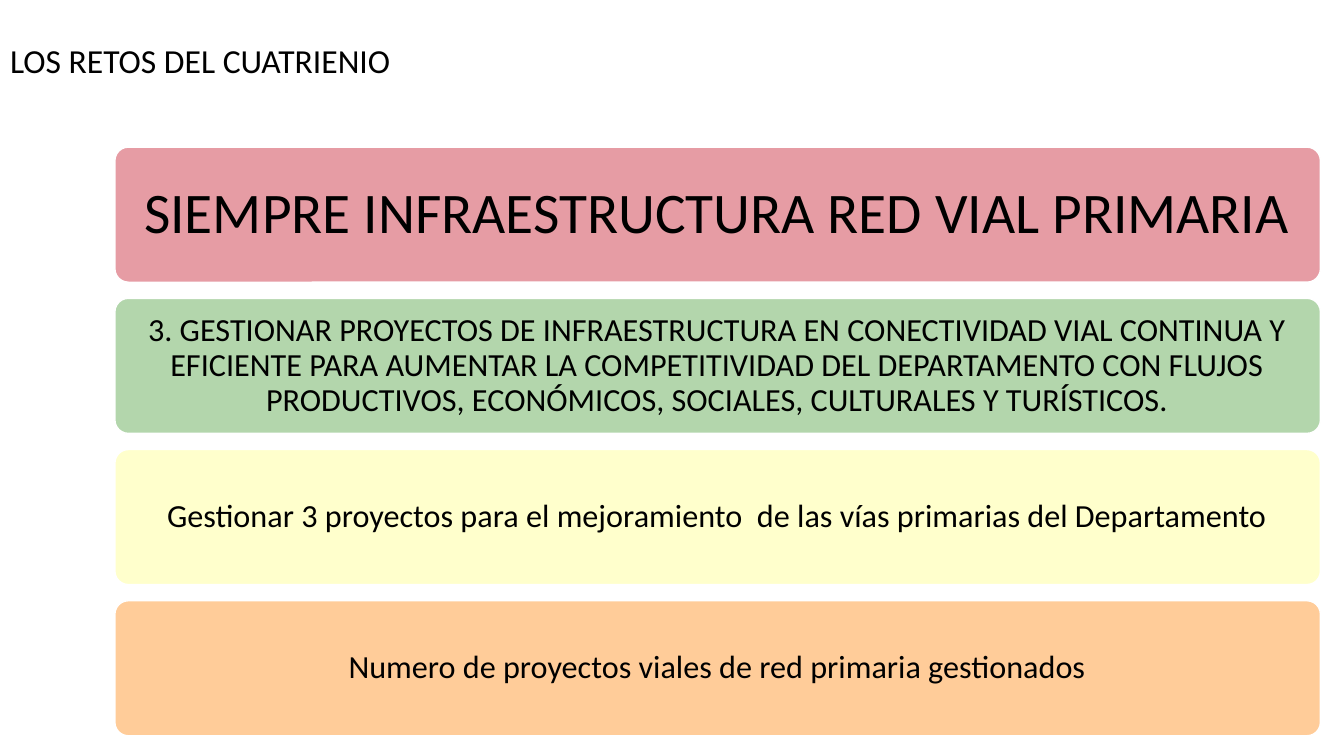
import pptx
import pptx.util
import pptx.dml.color
import pptx.enum.shapes
import pptx.enum.text

Pt = pptx.util.Pt
ALIGN = pptx.enum.text.PP_ALIGN
MIDDLE = pptx.enum.text.MSO_ANCHOR.MIDDLE
ROUNDED = pptx.enum.shapes.MSO_SHAPE.ROUNDED_RECTANGLE

BAND_LEFT, BAND_TOP = 82.1, 105.1
BAND_WIDTH, BAND_HEIGHT = 861.1, 96.5
BAND_PITCH = 108

# text, fill, font size, inset
BANDS = [
    ("SIEMPRE INFRAESTRUCTURA RED VIAL PRIMARIA", "E69CA4", 41, 12.3),
    ("3. GESTIONAR PROYECTOS DE INFRAESTRUCTURA EN CONECTIVIDAD VIAL CONTINUA Y "
     "EFICIENTE PARA AUMENTAR LA COMPETITIVIDAD DEL DEPARTAMENTO CON FLUJOS "
     "PRODUCTIVOS, ECONÓMICOS, SOCIALES, CULTURALES Y TURÍSTICOS.", "B3D6AC", 23, 6.9),
    ("Gestionar 3 proyectos para el mejoramiento  de las vías primarias del Departamento",
     "FFFFCC", 23, 6.9),
    ("Numero de proyectos viales de red primaria gestionados", "FFCC99", 23, 6.9),
]


def color(hex_value):
    return pptx.dml.color.RGBColor.from_string(hex_value)


class Deck:
    font = "Calibri"
    ink = "000000"

    def __init__(self, width, height):
        self.prs = pptx.Presentation()
        self.prs.slide_width, self.prs.slide_height = Pt(width), Pt(height)

    def add_slide(self):
        self.s = self.prs.slides.add_slide(self.prs.slide_layouts[5])

    def set_text(self, sp, text, size, align, inset_x, inset_y):
        tf = sp.text_frame
        tf.word_wrap = True
        tf.auto_size = pptx.enum.text.MSO_AUTO_SIZE.NONE
        tf.vertical_anchor = MIDDLE
        tf.margin_left = tf.margin_right = Pt(inset_x)
        tf.margin_top = tf.margin_bottom = Pt(inset_y)
        p = tf.paragraphs[0]
        p.alignment = align
        p.line_spacing = 0.9
        p.space_before = Pt(0)
        r = p.add_run()
        r.text = text
        r.font.name = self.font
        r.font.size = Pt(size)
        r.font.color.rgb = color(self.ink)

    def title(self, text, left, top, width, height, size):
        sp = self.s.shapes.title
        sp.left, sp.top, sp.width, sp.height = Pt(left), Pt(top), Pt(width), Pt(height)
        self.set_text(sp, text, size, ALIGN.LEFT, 7.2, 3.6)

    def band(self, text, left, top, width, height, fill, size, inset):
        sp = self.s.shapes.add_shape(ROUNDED, Pt(left), Pt(top), Pt(width), Pt(height))
        sp.adjustments[0] = 0.1
        sp.shadow.inherit = False
        sp.fill.solid()
        sp.fill.fore_color.rgb = color(fill)
        sp.line.color.rgb = color("FFFFFF")
        sp.line.width = Pt(1)
        self.set_text(sp, text, size, ALIGN.CENTER, inset, inset)


def main():
    deck = Deck(960, 540)
    deck.add_slide()
    deck.title("LOS RETOS DEL CUATRIENIO", 0, 0, 543.6, 89.3, 24)
    for i, (text, fill, size, inset) in enumerate(BANDS):
        deck.band(text, BAND_LEFT, BAND_TOP + i * BAND_PITCH, BAND_WIDTH, BAND_HEIGHT,
                  fill, size, inset)
    deck.prs.save("out.pptx")


if __name__ == "__main__":
    main()
